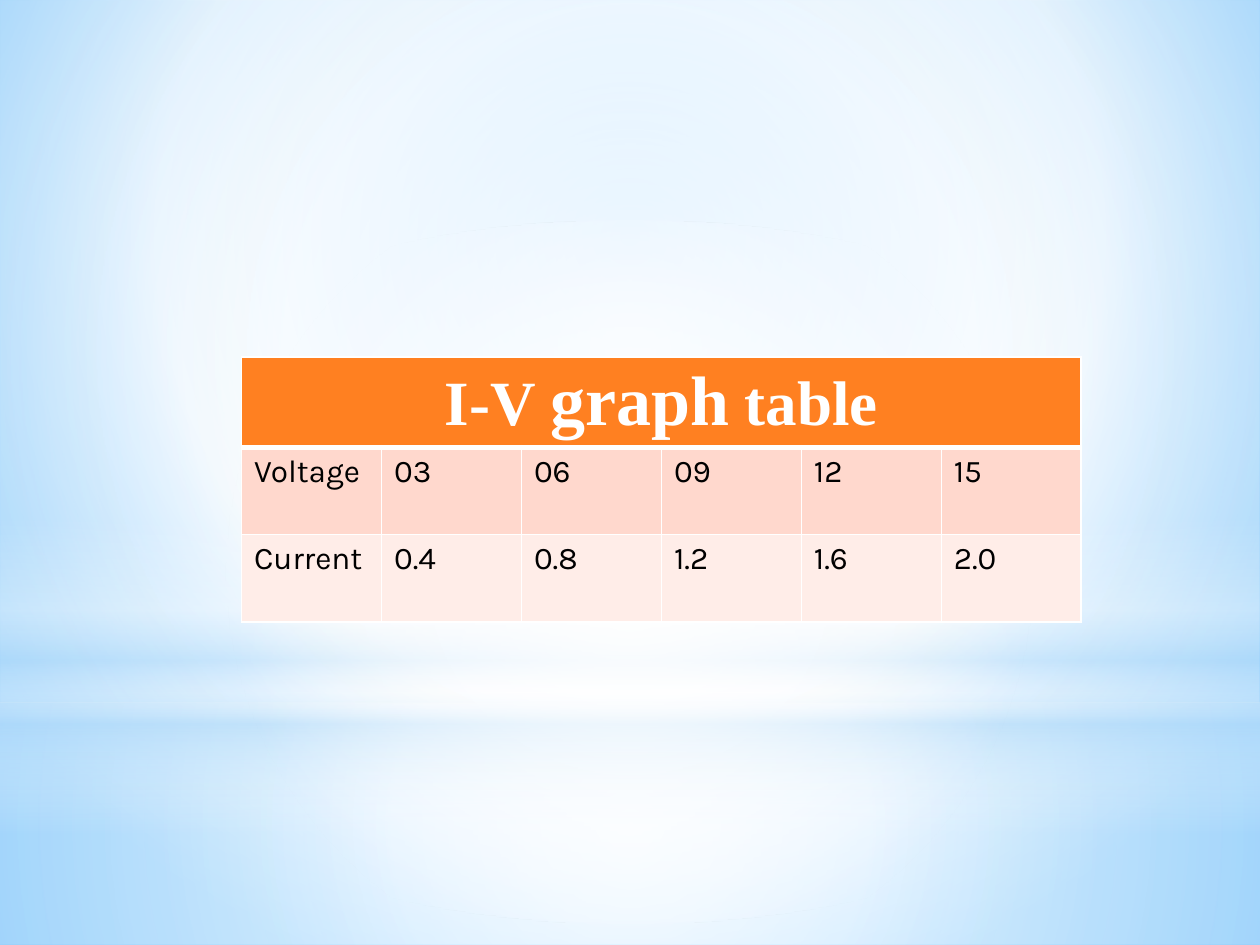
from dataclasses import dataclass

from pptx import Presentation
from pptx.dml.color import RGBColor
from pptx.enum.shapes import MSO_SHAPE
from pptx.enum.text import PP_ALIGN
from pptx.oxml import parse_xml
from pptx.oxml.ns import nsdecls, qn
from pptx.util import Cm, Pt


@dataclass(frozen=True)
class Theme:
    white: str = "FFFFFF"
    black: str = "000000"
    sky: str = "9ED5FF"
    deep_sky: str = "5BB9FF"
    mist: str = "B4DCFA"
    header: str = "FF8021"
    body_rows: tuple = ("FFD8CD", "FFEDE8")
    title_font: str = "Times New Roman"
    body_font: str = "Karla"
    title_size: int = 36
    emphasis_size: int = 40
    body_size: int = 18
    grid_width: int = 1
    header_rule: int = 3


THEME = Theme()
CENTRE = (50, 50, 50, 50)


def set_gradient(fill, parent, stops, focus=None):
    """Fill with (position, colour, opacity) stops, radial around focus or downwards."""
    stop_xml = "".join(
        f'<a:gs pos="{position * 1000}"><a:srgbClr val="{colour}">'
        f'<a:alpha val="{opacity * 1000}"/></a:srgbClr></a:gs>'
        for position, colour, opacity in stops
    )
    if focus:
        left, top, right, bottom = (edge * 1000 for edge in focus)
        direction = (f'<a:path path="circle"><a:fillToRect l="{left}" t="{top}" '
                     f'r="{right}" b="{bottom}"/></a:path>')
    else:
        direction = '<a:lin ang="5400000" scaled="0"/>'
    gradient = parse_xml(f'<a:gradFill {nsdecls("a")} rotWithShape="1">'
                         f'<a:gsLst>{stop_xml}</a:gsLst>{direction}</a:gradFill>')
    fill.solid()
    parent.replace(parent.find(qn("a:solidFill")), gradient)


def add_glow(page, kind, box, stops, focus=None):
    glow = page.shapes.add_shape(kind, *(Cm(length) for length in box))
    glow.shadow.inherit = False
    glow.line.fill.background()
    set_gradient(glow.fill, glow._element.spPr, stops, focus)


def add_backdrop(page, box):
    """Sky gradient with a horizon band and soft light over it."""
    left, top, width, height = box
    white, mist = THEME.white, THEME.mist
    fill = page.background.fill
    fill.solid()
    set_gradient(fill, page._element.find(".//" + qn("p:bgPr")),
                 [(0, THEME.sky, 100), (60, white, 100), (100, THEME.deep_sky, 100)],
                 (20, 10, 20, 60))

    # Ground and sky meet at the horizon
    horizon = 14.17
    add_glow(page, MSO_SHAPE.RECTANGLE, (left, top + horizon, width, height - horizon),
             [(0, white, 91), (37, white, 76), (100, mist, 79)], CENTRE)
    add_glow(page, MSO_SHAPE.RECTANGLE, (left, top, width, horizon),
             [(0, white, 89), (48, white, 62), (100, mist, 79)], CENTRE)

    # Horizon band and central light
    add_glow(page, MSO_SHAPE.RECTANGLE, (left, top + 10.46, width, 6.35),
             [(0, white, 0), (29, white, 30), (45, mist, 40),
              (55, white, 26), (65, mist, 60), (100, white, 0)])
    add_glow(page, MSO_SHAPE.OVAL, (left, top + 4.45, width, horizon),
             [(0, white, 100), (56, white, 0)], CENTRE)


def style_cell(cell, colour, top_width, bottom_width):
    cell.fill.solid()
    cell.fill.fore_color.rgb = RGBColor.from_string(colour)
    widths = {"L": THEME.grid_width, "R": THEME.grid_width,
              "T": top_width, "B": bottom_width}
    for index, (side, width) in enumerate(widths.items()):
        border = parse_xml(
            f'<a:ln{side} {nsdecls("a")} w="{Pt(width)}"><a:solidFill>'
            f'<a:srgbClr val="{THEME.white}"/></a:solidFill></a:ln{side}>')
        cell._tc.get_or_add_tcPr().insert(index, border)


def style_span(span, font, size, colour, bold):
    span.font.name = font
    span.font.size = Pt(size)
    span.font.bold = bold
    span.font.color.rgb = RGBColor.from_string(colour)


def add_readings_table(page, box, title, readings):
    """Merged title row above one row for each measured quantity."""
    left, top, width, height = box
    row_count, column_count = len(readings) + 1, len(readings[0])
    table = page.shapes.add_table(row_count, column_count, Cm(left), Cm(top),
                                  Cm(width), Cm(height)).table
    for column in table.columns:
        column.width = Cm(width / column_count)
    for row in table.rows:
        row.height = Cm(height / row_count)

    # Title row
    table.cell(0, 0).merge(table.cell(0, column_count - 1))
    for cell in table.rows[0].cells:
        style_cell(cell, THEME.header, THEME.grid_width, THEME.header_rule)
    para = table.cell(0, 0).text_frame.paragraphs[0]
    para.alignment = PP_ALIGN.CENTER
    for text, size in title:
        span = para.add_run()
        span.text = text
        style_span(span, THEME.title_font, size, THEME.white, True)

    # Readings
    for row_index, (values, colour) in enumerate(zip(readings, THEME.body_rows), 1):
        top_width = THEME.header_rule if row_index == 1 else THEME.grid_width
        for cell, value in zip(table.rows[row_index].cells, values):
            style_cell(cell, colour, top_width, THEME.grid_width)
            cell.text_frame.text = value
            style_span(cell.text_frame.paragraphs[0].runs[0], THEME.body_font,
                       THEME.body_size, THEME.black, False)


def main():
    deck = Presentation()
    deck.slide_width, deck.slide_height = Cm(25.4), Cm(19.05)
    page = deck.slides.add_slide(deck.slide_layouts[6])
    add_backdrop(page, (0, 0, 25.4, 19.05))
    add_readings_table(
        page, (4.87, 7.2, 16.93, 5.28),
        [("I-V ", THEME.title_size), ("graph", THEME.emphasis_size),
         (" table", THEME.title_size)],
        [("Voltage", "03", "06", "09", "12", "15"),
         ("Current", "0.4", "0.8", "1.2", "1.6", "2.0")])
    deck.save("out.pptx")


if __name__ == "__main__":
    main()
